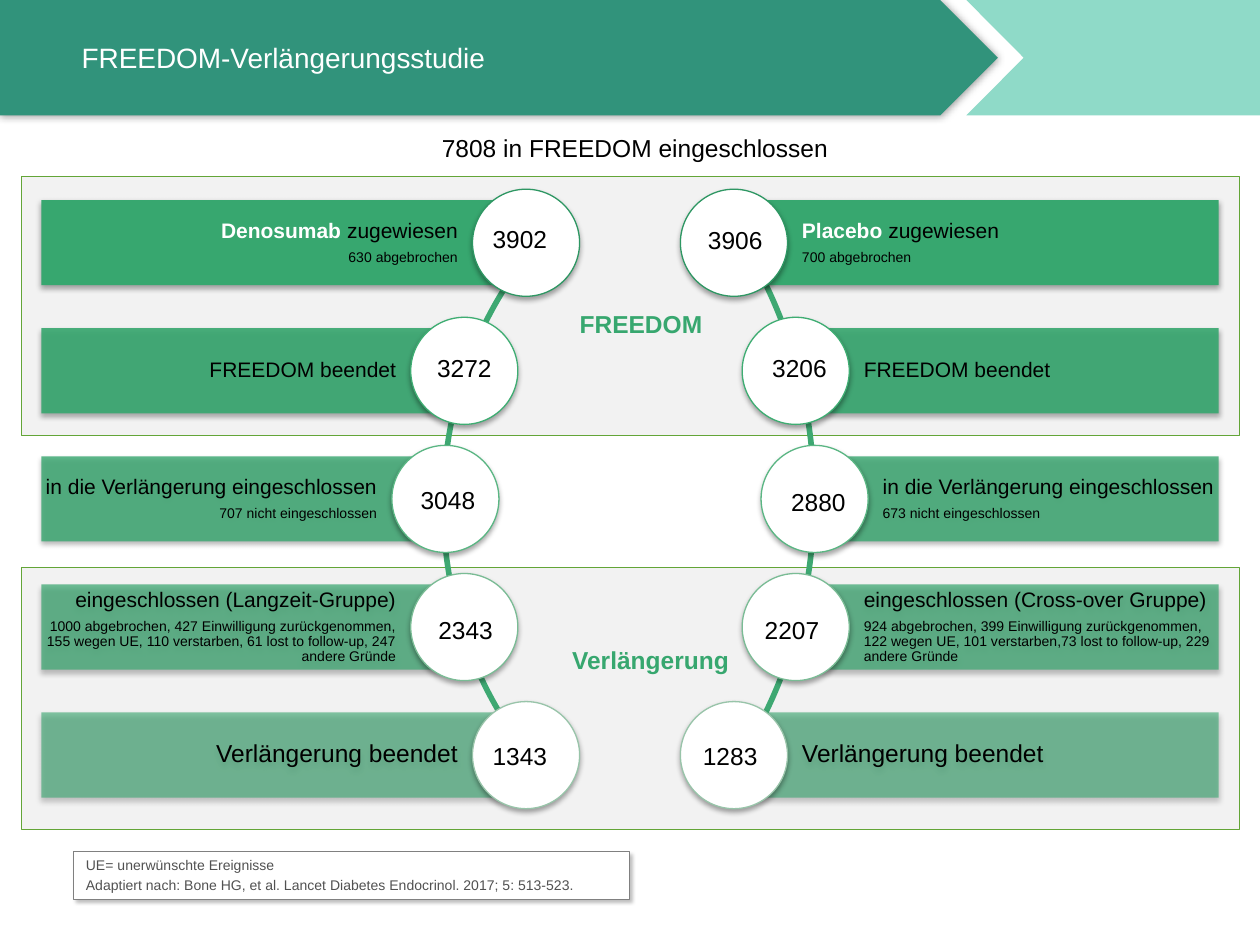
from lxml import etree
from pptx import Presentation
from pptx.dml.color import RGBColor
from pptx.enum import shapes, text
from pptx.oxml import ns
from pptx.util import Pt

FONT = "Arial"
BLACK = RGBColor(0x00, 0x00, 0x00)
WHITE = RGBColor(0xFF, 0xFF, 0xFF)
NOTE_TEXT = RGBColor(0x51, 0x51, 0x51)
NOTE_LINE = RGBColor(0x80, 0x80, 0x80)
HEADER = RGBColor(0x31, 0x93, 0x7B)
HEADER_LIGHT = RGBColor(0x8F, 0xDA, 0xC8)
PANEL = RGBColor(0xF2, 0xF2, 0xF2)
PANEL_LINE = RGBColor(0x63, 0xA5, 0x37)
BAR = RGBColor(0x37, 0xA7, 0x6F)
ARC = RGBColor(0x3E, 0xA8, 0x72)
RINGS = [RGBColor.from_string(code) for code in
         ("2E9763", "3EAD72", "5AB683", "7ABC95", "98C4A9")]

LEFT, CENTER, RIGHT = text.PP_ALIGN.LEFT, text.PP_ALIGN.CENTER, text.PP_ALIGN.RIGHT
SOFT_SHADOW = (35, 3.1, 1.8, 90)  # opacity in %, blur, distance, direction

# Rows of the flow: both sides mirror each other about the middle of the slide
MIDDLE = 360
BAR_REACH = 336.4
BAR_HEIGHT = 48.7
CIRCLE = 61.2
FIRST_ROW, ROW_PITCH = 138.7, 73.2
CENTER_OFFSETS = [59.4, 94.7, 105.5, 94.7, 59.4]

# Each row: number, its left and top, headline, detail
RIGHT_ROWS = [
    ("3906", 395.3, 125.3, "Placebo| zugewiesen", "700 abgebrochen"),
    ("3206", 432, 198, "FREEDOM beendet", ""),
    ("2880", 442.8, 275, "in die Verlängerung eingeschlossen", "673 nicht eingeschlossen"),
    ("2207", 427.7, 347.8, "eingeschlossen (Cross-over Gruppe)",
     "924 abgebrochen, 399 Einwilligung zurückgenommen, 122 wegen UE, "
     "101 verstarben,73 lost to follow-up, 229 andere Gründe"),
    ("1283", 392.4, 419.8, "Verlängerung beendet", ""),
]
LEFT_ROWS = [
    ("3902", 272.2, 124.6, "Denosumab| zugewiesen", "630 abgebrochen"),
    ("3272", 240.5, 198, "FREEDOM beendet", ""),
    ("3048", 231.1, 273.6, "in die Verlängerung eingeschlossen", "707 nicht eingeschlossen"),
    ("2343", 241.2, 347.8, "eingeschlossen (Langzeit-Gruppe)",
     "1000 abgebrochen, 427 Einwilligung zurückgenommen, 155 wegen UE, "
     "110 verstarben, 61 lost to follow-up, 247 andere Gründe"),
    ("1343", 272.2, 419.8, "Verlängerung beendet", ""),
]


def add_shadow(shape, opacity, blur, distance, direction):
    effects = shape._element.spPr.find(ns.qn("a:effectLst"))
    shadow = etree.SubElement(effects, ns.qn("a:outerShdw"), blurRad=str(Pt(blur)),
                              dist=str(Pt(distance)), dir=str(direction * 60000),
                              algn="ctr", rotWithShape="0")
    color = etree.SubElement(shadow, ns.qn("a:srgbClr"), val="000000")
    etree.SubElement(color, ns.qn("a:alpha"), val=str(opacity * 1000))


def paint(shape, fill=None, line=None, weight=0.75, shadow=None, opacity=100):
    shape.shadow.inherit = False
    if fill is None:
        shape.fill.background()
    else:
        shape.fill.solid()
        shape.fill.fore_color.rgb = fill
    if opacity < 100:
        color = shape._element.spPr.find(".//" + ns.qn("a:srgbClr"))
        etree.SubElement(color, ns.qn("a:alpha"), val=str(opacity * 1000))
    if line is None:
        shape.line.fill.background()
    else:
        shape.line.color.rgb = line
        shape.line.width = Pt(weight)
    if shadow:
        add_shadow(shape, *shadow)


def add_block(slide, kind, left, top, width, height, **look):
    shape = slide.shapes.add_shape(kind, Pt(left), Pt(top), Pt(width), Pt(height))
    paint(shape, **look)
    return shape


def set_frame(shape, anchor, insets=(7.2, 3.6, 7.2, 3.6), wrap=True):
    frame = shape.text_frame
    frame.word_wrap = wrap
    frame.vertical_anchor = anchor
    frame.margin_left, frame.margin_top, frame.margin_right, frame.margin_bottom = map(Pt, insets)
    return frame


def add_paragraph(frame, runs, size, align=LEFT, spacing=1.0, before=0, after=0):
    paragraph = frame.paragraphs[0]
    if paragraph.runs:
        paragraph = frame.add_paragraph()
    paragraph.alignment = align
    paragraph.line_spacing = spacing
    paragraph.space_before, paragraph.space_after = Pt(before), Pt(after)
    for words, color, bold in runs:
        run = paragraph.add_run()
        run.text = words
        run.font.name, run.font.size, run.font.bold = FONT, Pt(size), bold
        run.font.color.rgb = color


def add_label(slide, words, left, top, width, height, size=14, color=BLACK, bold=False,
              align=CENTER, anchor=text.MSO_ANCHOR.TOP, spacing=1.0, **frame_options):
    box = slide.shapes.add_textbox(Pt(left), Pt(top), Pt(width), Pt(height))
    frame = set_frame(box, anchor, **frame_options)
    add_paragraph(frame, [(words, color, bold)], size, align, spacing)


def add_header(slide):
    builder = slide.shapes.build_freeform(Pt(552.2), 0)
    builder.add_line_segments([(Pt(x), Pt(y)) for x, y in
                               ((720, 0), (720, 66), (552.2, 66), (585, 33))])
    paint(builder.convert_to_shape(), fill=HEADER_LIGHT)
    add_block(slide, shapes.MSO_SHAPE.PENTAGON, 0, 0, 570.2, 66,
              fill=HEADER, shadow=(40, 5, 0, 0))
    add_label(slide, "FREEDOM-Verlängerungsstudie", 39.6, 8.6, 482.4, 48.2, size=16,
              color=WHITE, align=LEFT, anchor=text.MSO_ANCHOR.MIDDLE)


def add_note(slide):
    note = add_block(slide, shapes.MSO_SHAPE.RECTANGLE, 42, 486.6, 317.7, 27.4, fill=WHITE,
                     line=NOTE_LINE, weight=0.25, shadow=(25, 2, 2, 45))
    frame = set_frame(note, text.MSO_ANCHOR.BOTTOM)
    for words in ("UE= unerwünschte Ereignisse",
                  "Adaptiert nach: Bone HG, et al. Lancet Diabetes Endocrinol. 2017; 5: 513-523."):
        add_paragraph(frame, [(words, NOTE_TEXT, False)], 8, spacing=0.9, before=2.4)


def add_arc(slide, left, top, width, height, start, end):
    arc = add_block(slide, shapes.MSO_SHAPE.BLOCK_ARC, left, top, width, height,
                    line=ARC, weight=2)
    for index, value in enumerate((start, end, 0.003)):
        arc.adjustments[index] = value


def add_bar(slide, side, row, headline, detail):
    """Draw a bar and its circle; side is -1 for left and 1 for right."""
    offset = CENTER_OFFSETS[row]
    middle_y = FIRST_ROW + row * ROW_PITCH
    center_x = MIDDLE + side * offset
    bar = add_block(slide, shapes.MSO_SHAPE.RECTANGLE,
                    min(center_x, MIDDLE + side * BAR_REACH), middle_y - BAR_HEIGHT / 2,
                    BAR_REACH - offset, BAR_HEIGHT,
                    fill=BAR, shadow=SOFT_SHADOW, opacity=100 - 10 * row)
    insets = (38.9, 2.2, 2.2, 2.2) if side > 0 else (2.2, 2.2, 38.9, 2.2)
    frame = set_frame(bar, text.MSO_ANCHOR.MIDDLE, insets)
    align = RIGHT if side < 0 else LEFT
    group, divider, rest = headline.rpartition("|")
    runs = [(group, WHITE, True)] if divider else []
    size = 14 if row == 4 else 12
    add_paragraph(frame, runs + [(rest, BLACK, False)], size, align, 0.9, after=0.35 * size)
    if detail:
        add_paragraph(frame, [(detail, BLACK, False)], 8, align, 0.9,
                      after=1.2 if side < 0 or row == 2 else 2.8)
    add_block(slide, shapes.MSO_SHAPE.OVAL, center_x - CIRCLE / 2, middle_y - CIRCLE / 2,
              CIRCLE, CIRCLE, fill=WHITE, line=RINGS[row], shadow=SOFT_SHADOW)


def main():
    presentation = Presentation()
    presentation.slide_width, presentation.slide_height = Pt(720), Pt(540)
    slide = presentation.slides.add_slide(presentation.slide_layouts[6])

    # Header, study phase panels and source note
    add_header(slide)
    for top, height in ((324.2, 149.8), (100.8, 148.3)):
        add_block(slide, shapes.MSO_SHAPE.RECTANGLE, 12.2, top, 696.2, height,
                  fill=PANEL, line=PANEL_LINE)
    add_note(slide)

    # Both treatment arms
    for side, rows, arc in ((1, RIGHT_ROWS, (59.8, 41.8, 406, 486, 189, 27)),
                            (-1, LEFT_ROWS, (252.7, 72.7, 388, 431.3, 81, 135))):
        add_arc(slide, *arc)
        for row, (_, _, _, headline, detail) in enumerate(rows):
            add_bar(slide, side, row, headline, detail)

    # Patient numbers
    for number, left, top, _, _ in LEFT_ROWS + RIGHT_ROWS:
        add_label(slide, number, left, top, 49.7, 23.8)

    # Headline and phase names
    add_label(slide, "7808 in FREEDOM eingeschlossen", 200.9, 72.7, 324, 24.5)
    for phase, left, top, width in (("FREEDOM", 331.2, 179, 70.6),
                                    ("Verlängerung", 326.9, 371, 90)):
        add_label(slide, phase, left, top, width, 14.4, color=BAR, bold=True, align=LEFT,
                  anchor=text.MSO_ANCHOR.MIDDLE, spacing=0.85, insets=(0, 0, 0, 0), wrap=False)

    presentation.save("out.pptx")


if __name__ == "__main__":
    main()
